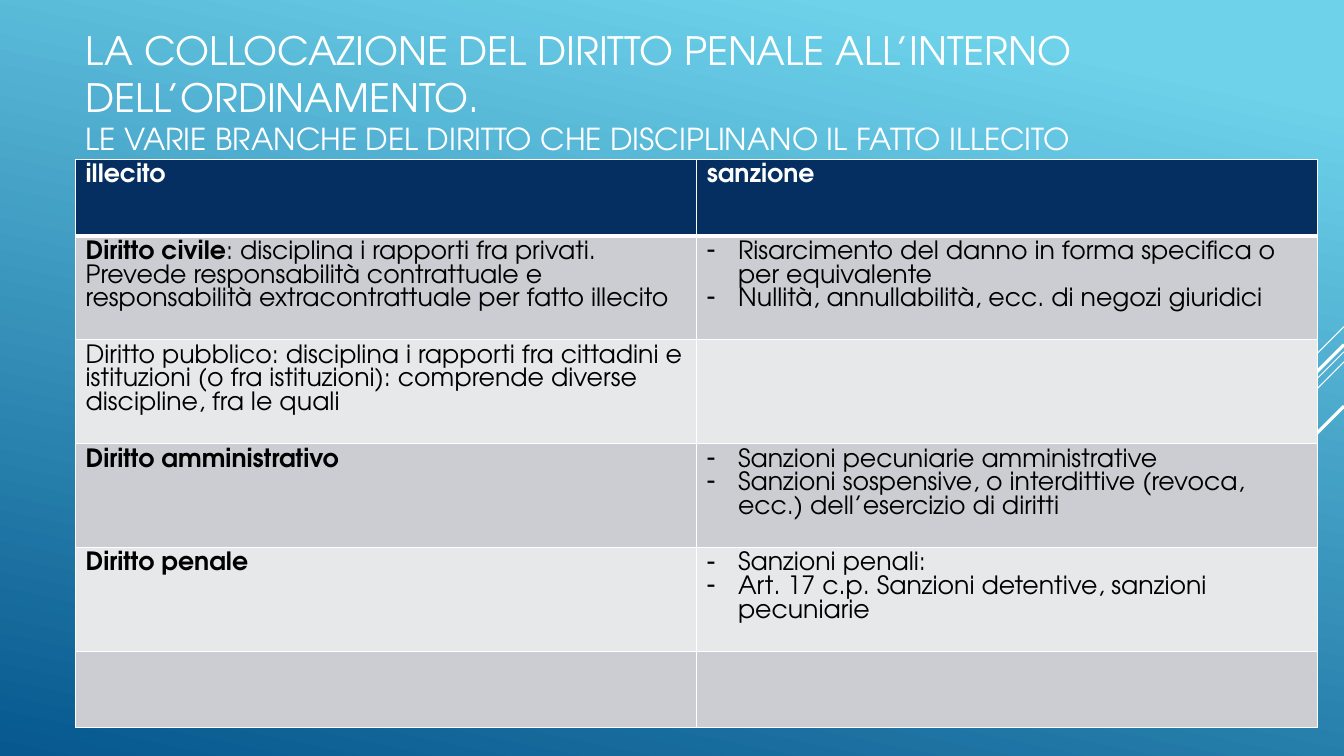
from lxml import etree
from pptx import Presentation
from pptx.dml.color import RGBColor
from pptx.enum.shapes import MSO_CONNECTOR
from pptx.enum.text import MSO_ANCHOR
from pptx.oxml.ns import qn
from pptx.util import Pt

STRAIGHT = MSO_CONNECTOR.STRAIGHT
MIDDLE = MSO_ANCHOR.MIDDLE
PX = 9144  # EMU in one px, 100 px to the inch

THEME = {
    "font": "TeX Gyre Adventor",
    "white": "FFFFFF", "black": "000000",
    "sky": "6ED2EB", "deep": "06588E",
    "header": "052F61", "bands": ["E7E8EA", "CCCDD2"],
    "title": 27.9, "subtitle": 21.6, "body": 18,
}


def add_run(paragraph, text, size, color, bold=False):
    run = paragraph.add_run()
    run.text = text
    run.font.name = THEME["font"]
    run.font.size = Pt(size)
    run.font.bold = bold
    run.font.color.rgb = RGBColor.from_string(color)


def set_borders(cell, bottom_width, top_width):
    properties = cell._tc.get_or_add_tcPr()
    widths = {"a:lnL": 1, "a:lnR": 1, "a:lnT": top_width, "a:lnB": bottom_width}
    for index, (side, width) in enumerate(widths.items()):
        line = etree.Element(qn(side), w=str(Pt(width)))
        fill = etree.SubElement(line, qn("a:solidFill"))
        etree.SubElement(fill, qn("a:srgbClr"), val=THEME["white"])
        properties.insert(index, line)


presentation = Presentation()
presentation.slide_width = 1333 * PX
presentation.slide_height = 750 * PX
slide = presentation.slides.add_slide(presentation.slide_layouts[6])

# Background gradient
background = slide.background.fill
background.gradient()
background.gradient_angle = 258
for stop, position, color in zip(background.gradient_stops, (0.1, 1), ("sky", "deep")):
    stop.position = position
    stop.color.rgb = RGBColor.from_string(THEME[color])

# Diagonal lines from the right edge: start height, run, width
for top, run_length, width in [(324, 100, 0.75), (349, 326, 0.75), (359, 207, 0.75),
                               (342, 191, 2.25), (403, 139, 2.25)]:
    connector = slide.shapes.add_connector(
        STRAIGHT, 1333 * PX, top * PX, (1333 - run_length) * PX, (top + run_length) * PX)
    connector.line.color.rgb = RGBColor.from_string(THEME["white"])
    connector.line.width = Pt(width)
    etree.SubElement(connector._element.spPr, qn("a:effectLst"))

# Title
title = slide.shapes.add_textbox(75 * PX, 23 * PX, 1193 * PX, 135 * PX)
title.text_frame.word_wrap = True
title.text_frame.vertical_anchor = MIDDLE
paragraph = title.text_frame.paragraphs[0]
add_run(paragraph, "LA COLLOCAZIONE DEL DIRITTO PENALE ALL’INTERNO DELL’ORDINAMENTO.",
        THEME["title"], THEME["white"])
paragraph.add_line_break()
add_run(paragraph, "LE VARIE BRANCHE DEL DIRITTO CHE DISCIPLINANO IL FATTO ILLECITO",
        THEME["subtitle"], THEME["white"])

# Table content: bold lead, plain text, listed sanctions
branches = [
    ("Diritto civile", ": disciplina i rapporti fra privati. Prevede responsabilità "
     "contrattuale e responsabilità extracontrattuale per fatto illecito",
     ["Risarcimento del danno in forma specifica o per equivalente",
      "Nullità, annullabilità, ecc. di negozi giuridici"]),
    ("", "Diritto pubblico: disciplina i rapporti fra cittadini e istituzioni "
     "(o fra istituzioni): comprende diverse discipline, fra le quali", []),
    ("Diritto amministrativo", "",
     ["Sanzioni pecuniarie amministrative",
      "Sanzioni sospensive, o interdittive (revoca, ecc.) dell’esercizio di diritti"]),
    ("Diritto penale", "",
     ["Sanzioni penali:", "Art. 17 c.p. Sanzioni detentive, sanzioni pecuniarie"]),
    ("", "", []),
]
row_heights = [76, 103, 103, 103, 103, 76]
table = slide.shapes.add_table(
    len(row_heights), 2, 75 * PX, 158 * PX, 1232 * PX, sum(row_heights) * PX).table

# Row heights, fills and borders
for index, height in enumerate(row_heights):
    table.rows[index].height = height * PX
    color = THEME["bands"][index % 2] if index else THEME["header"]
    for cell in table.rows[index].cells:
        cell.fill.solid()
        cell.fill.fore_color.rgb = RGBColor.from_string(color)
        set_borders(cell, 1 if index else 3, 3 if index == 1 else 1)

# Header text
for column, heading in enumerate(["illecito", "sanzione"]):
    paragraph = table.cell(0, column).text_frame.paragraphs[0]
    add_run(paragraph, heading, THEME["body"], THEME["white"], True)

# Body text
for row, (lead, text, sanctions) in enumerate(branches, 1):
    paragraph = table.cell(row, 0).text_frame.paragraphs[0]
    for part, bold in ((lead, True), (text, False)):
        if part:
            add_run(paragraph, part, THEME["body"], THEME["black"], bold)
    frame = table.cell(row, 1).text_frame
    for index, sanction in enumerate(sanctions):
        paragraph = frame.add_paragraph() if index else frame.paragraphs[0]
        properties = paragraph._p.get_or_add_pPr()
        properties.set("marL", str(31 * PX))
        properties.set("indent", str(-31 * PX))
        etree.SubElement(properties, qn("a:buFontTx"))
        etree.SubElement(properties, qn("a:buChar"), char="-")
        add_run(paragraph, sanction, THEME["body"], THEME["black"])

presentation.save("out.pptx")
